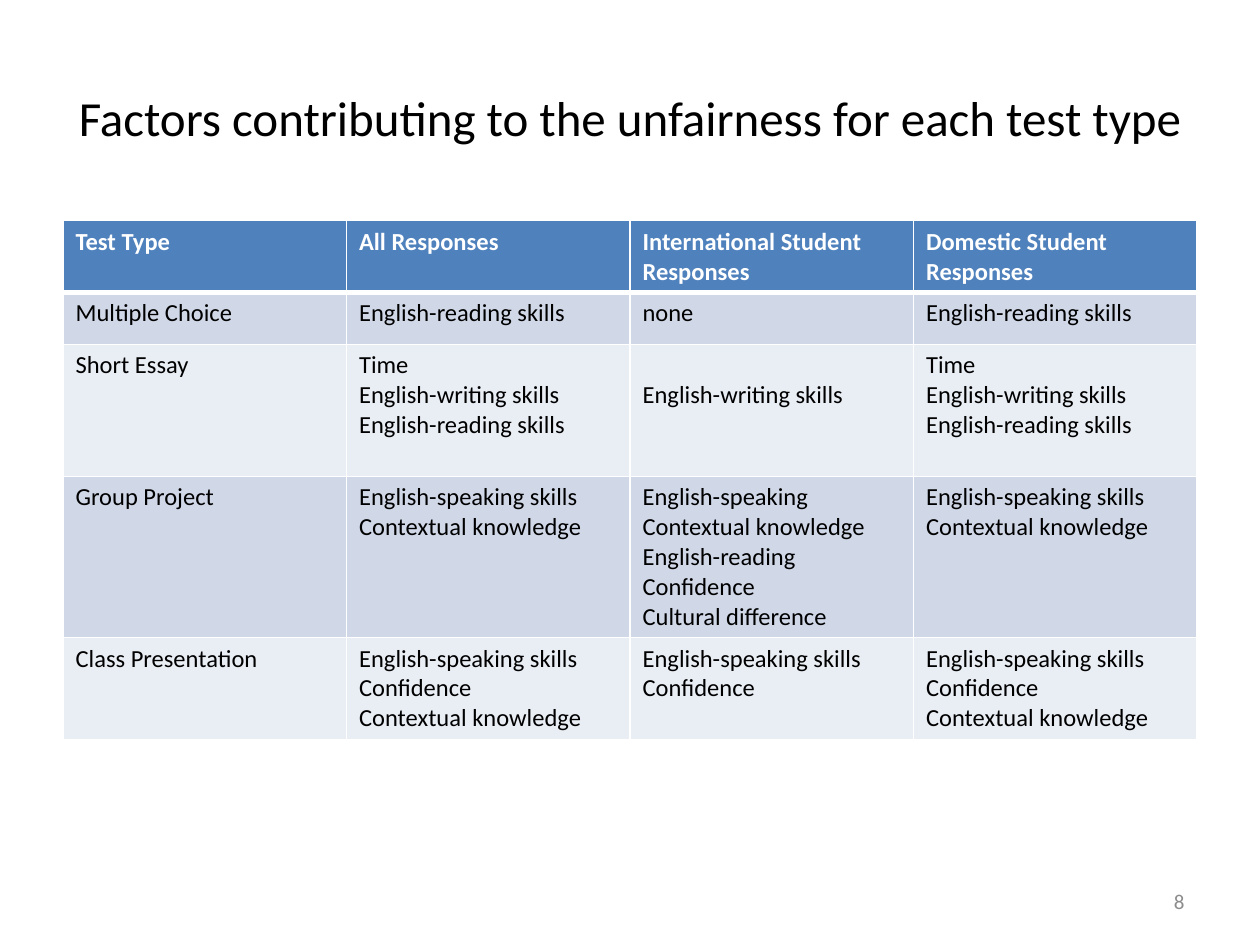
from dataclasses import dataclass

from lxml import etree
from pptx import Presentation
from pptx.dml.color import RGBColor
from pptx.enum import text
from pptx.oxml import ns
from pptx.util import Cm, Pt


@dataclass(frozen=True)
class Theme:
    font: str = "Calibri"
    ink: str = "000000"
    white: str = "FFFFFF"
    grey: str = "8C8C8C"
    header: str = "4F81BD"
    bands: tuple = ("D0D8E8", "E9EDF4")
    title_size: int = 28
    table_size: int = 14
    number_size: int = 12
    rule: int = 1
    header_rule: int = 3


THEME = Theme()

READING = "English-reading skills"
WRITING = "English-writing skills"
SPEAKING = "English-speaking skills"
CONTEXT = "Contextual knowledge"

# Each cell is a list of lines
ROWS = [
    [["Test Type"], ["All Responses"], ["International Student Responses"],
     ["Domestic Student Responses"]],
    [["Multiple Choice"], [READING], ["none"], [READING]],
    [["Short Essay"], ["Time", WRITING, READING], [WRITING],
     ["Time", WRITING, READING]],
    [["Group Project"], [SPEAKING, CONTEXT],
     ["English-speaking", CONTEXT, "English-reading", "Confidence",
      "Cultural difference"],
     [SPEAKING, CONTEXT]],
    [["Class Presentation"], [SPEAKING, "Confidence", CONTEXT],
     [SPEAKING, "Confidence"], [SPEAKING, "Confidence", CONTEXT]],
]
ROW_HEIGHTS = [1.43, 1.05, 2.66, 3.25, 2.06]
# Lowered to line up with the same factor in the neighbouring cells
LOWERED_CELL, LOWERED_MARGIN = (2, 2), 0.73


def style(p, size, color, bold=False):
    p.font.name = THEME.font
    p.font.size = Pt(size)
    p.font.bold = bold
    p.font.color.rgb = RGBColor.from_string(color)


def add_line(s, box, words, size, color, align):
    sp = s.shapes.add_textbox(*map(Cm, box))
    tf = sp.text_frame
    tf.word_wrap = True
    tf.vertical_anchor = text.MSO_ANCHOR.MIDDLE
    p = tf.paragraphs[0]
    p.text = words
    p.alignment = align
    style(p, size, color)


def add_title(s, box):
    add_line(s, box, "Factors contributing to the unfairness for each test type",
             THEME.title_size, THEME.ink, text.PP_ALIGN.CENTER)


def add_number(s, box):
    add_line(s, box, "8", THEME.number_size, THEME.grey, text.PP_ALIGN.RIGHT)


def set_borders(cell, top, bottom):
    tcPr = cell._tc.get_or_add_tcPr()
    widths = {"L": THEME.rule, "R": THEME.rule, "T": top, "B": bottom}
    for side, width in widths.items():
        ln = etree.SubElement(tcPr, ns.qn(f"a:ln{side}"), w=str(Pt(width)))
        fill = etree.SubElement(ln, ns.qn("a:solidFill"))
        etree.SubElement(fill, ns.qn("a:srgbClr"), val=THEME.white)


def fill_cell(cell, lines, row):
    header = row == 0
    set_borders(cell,
                top=THEME.header_rule if row == 1 else THEME.rule,
                bottom=THEME.header_rule if header else THEME.rule)
    cell.fill.solid()
    cell.fill.fore_color.rgb = RGBColor.from_string(
        THEME.header if header else THEME.bands[(row - 1) % 2])
    cell.text = "\n".join(lines)
    for p in cell.text_frame.paragraphs:
        style(p, THEME.table_size, THEME.white if header else THEME.ink, header)


def add_factors(s, box):
    left, top, width = box
    columns = len(ROWS[0])
    table = s.shapes.add_table(len(ROWS), columns, Cm(left), Cm(top),
                               Cm(width), Cm(sum(ROW_HEIGHTS))).table
    for column in table.columns:
        column.width = Cm(width / columns)
    for r, (cells, height) in enumerate(zip(ROWS, ROW_HEIGHTS)):
        table.rows[r].height = Cm(height)
        for c, lines in enumerate(cells):
            fill_cell(table.cell(r, c), lines, r)
    table.cell(*LOWERED_CELL).margin_top = Cm(LOWERED_MARGIN)


def main():
    prs = Presentation()
    prs.slide_width, prs.slide_height = Cm(25.4), Cm(19.05)
    s = prs.slides.add_slide(prs.slide_layouts[6])

    add_title(s, (1.27, 0.76, 22.86, 3.18))
    add_factors(s, (1.27, 4.45, 22.86))
    add_number(s, (18.2, 17.65, 5.93, 1.02))

    prs.save("out.pptx")


if __name__ == "__main__":
    main()
